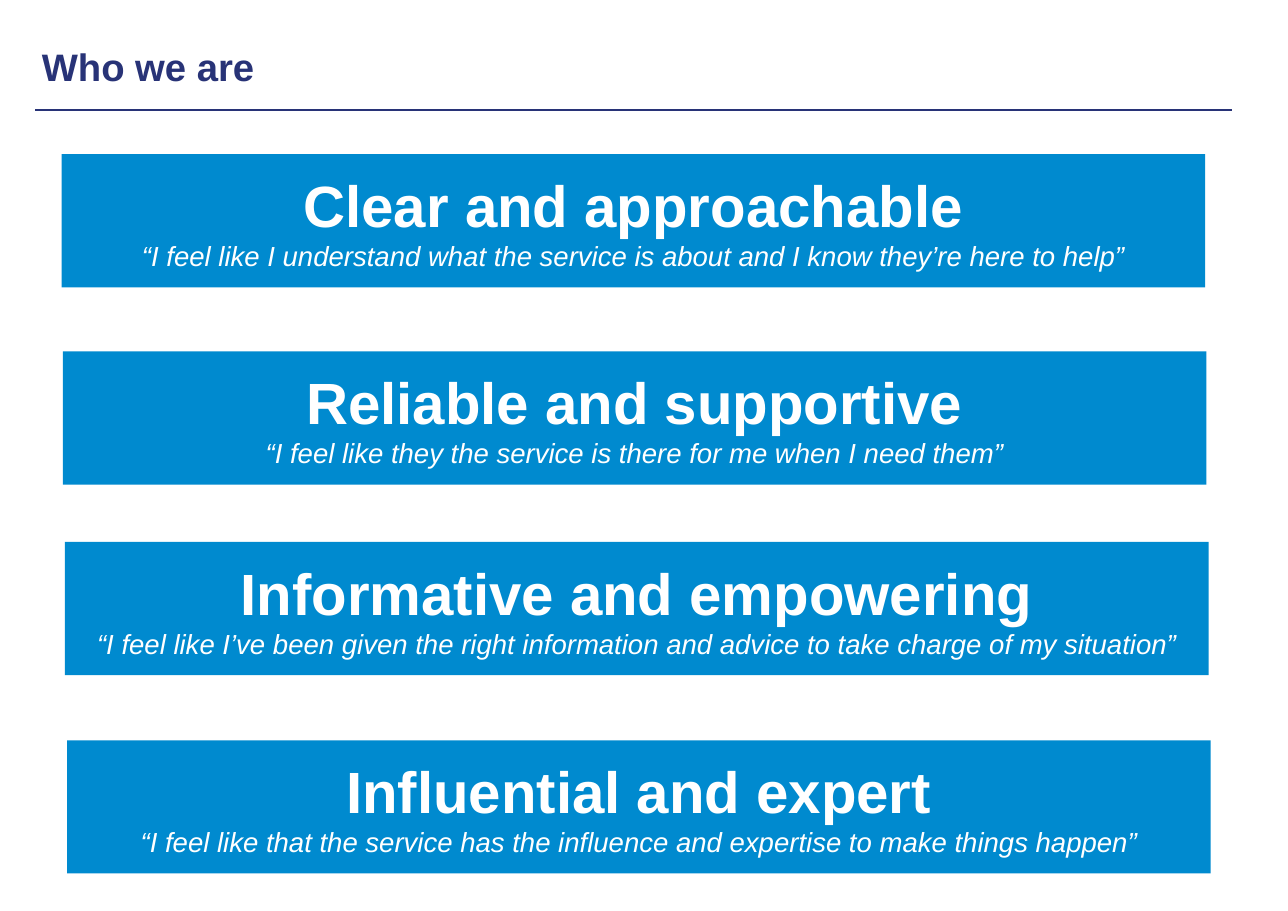
from pptx import Presentation
from pptx.dml.color import RGBColor
from pptx.enum.shapes import MSO_CONNECTOR, MSO_SHAPE
from pptx.enum.text import MSO_ANCHOR, MSO_AUTO_SIZE, PP_ALIGN
from pptx.oxml.ns import qn
from pptx.util import Inches, Pt
from lxml import etree

RECTANGLE = MSO_SHAPE.RECTANGLE
STRAIGHT = MSO_CONNECTOR.STRAIGHT
TOP, MIDDLE = MSO_ANCHOR.TOP, MSO_ANCHOR.MIDDLE
LEFT, CENTER = PP_ALIGN.LEFT, PP_ALIGN.CENTER
NO_AUTOFIT = MSO_AUTO_SIZE.NONE

NAVY = RGBColor(0x28, 0x33, 0x77)
BLUE = RGBColor(0x00, 0x8A, 0xCF)
WHITE = RGBColor(0xFF, 0xFF, 0xFF)

SLIDE_WIDTH, SLIDE_HEIGHT = Inches(11.69), Inches(8.27)
BAND_WIDTH, BAND_HEIGHT = 88.79, 14.63

VALUES = [
    (4.79, 16.93, "Clear and approachable",
     "“I feel like I understand what the service is about and I know they’re here to help”"),
    (4.88, 38.57, "Reliable and supportive",
     "“I feel like they the service is there for me when I need them”"),
    (5.05, 59.49, "Informative and empowering",
     "“I feel like I’ve been given the right information and advice to take charge of my situation”"),
    (5.22, 81.26, "Influential and expert",
     "“I feel like that the service has the influence and expertise to make things happen”"),
]


def across(percent):
    return round(SLIDE_WIDTH * percent / 100)


def down(percent):
    return round(SLIDE_HEIGHT * percent / 100)


def set_frame(frame, anchor):
    frame.word_wrap = True
    frame.auto_size = NO_AUTOFIT
    frame.vertical_anchor = anchor
    frame.margin_left = frame.margin_right = Inches(0.1)
    frame.margin_top = frame.margin_bottom = Inches(0.1)


def write(paragraph, text, size, color, align, bold=False, italic=False):
    paragraph.text = text
    paragraph.alignment = align
    font = paragraph.font
    font.name = "Arial"
    font.size = Pt(size)
    font.color.rgb = color
    font.bold = bold
    font.italic = italic


def place_heading(slide, text):
    heading = slide.shapes.title
    heading.left, heading.top = across(2.4), down(3.51)
    heading.width, heading.height = across(95.64), down(7.01)
    heading.fill.solid()
    heading.fill.fore_color.rgb = WHITE
    set_frame(heading.text_frame, TOP)
    write(heading.text_frame.paragraphs[0], text, 25, NAVY, LEFT, bold=True)


def add_rule(slide):
    rule = slide.shapes.add_connector(
        STRAIGHT, across(2.74), down(12.09), across(95.64), down(12.09))
    rule.line.color.rgb = NAVY
    rule.line.width = Pt(1.5)
    etree.SubElement(rule._element.spPr, qn("a:effectLst"))


def add_value_band(slide, left, top, value, quote):
    band = slide.shapes.add_shape(
        RECTANGLE, across(left), down(top), across(BAND_WIDTH), down(BAND_HEIGHT))
    band.shadow.inherit = False
    band.fill.solid()
    band.fill.fore_color.rgb = BLUE
    band.line.fill.background()
    frame = band.text_frame
    set_frame(frame, MIDDLE)
    write(frame.paragraphs[0], value, 38, WHITE, CENTER, bold=True)
    write(frame.add_paragraph(), quote, 18, WHITE, CENTER, italic=True)


def main():
    deck = Presentation()
    deck.slide_width, deck.slide_height = SLIDE_WIDTH, SLIDE_HEIGHT
    slide = deck.slides.add_slide(deck.slide_layouts.get_by_name("Title Only"))
    place_heading(slide, "Who we are")
    add_rule(slide)
    for left, top, value, quote in VALUES:
        add_value_band(slide, left, top, value, quote)
    deck.save("out.pptx")


if __name__ == "__main__":
    main()
